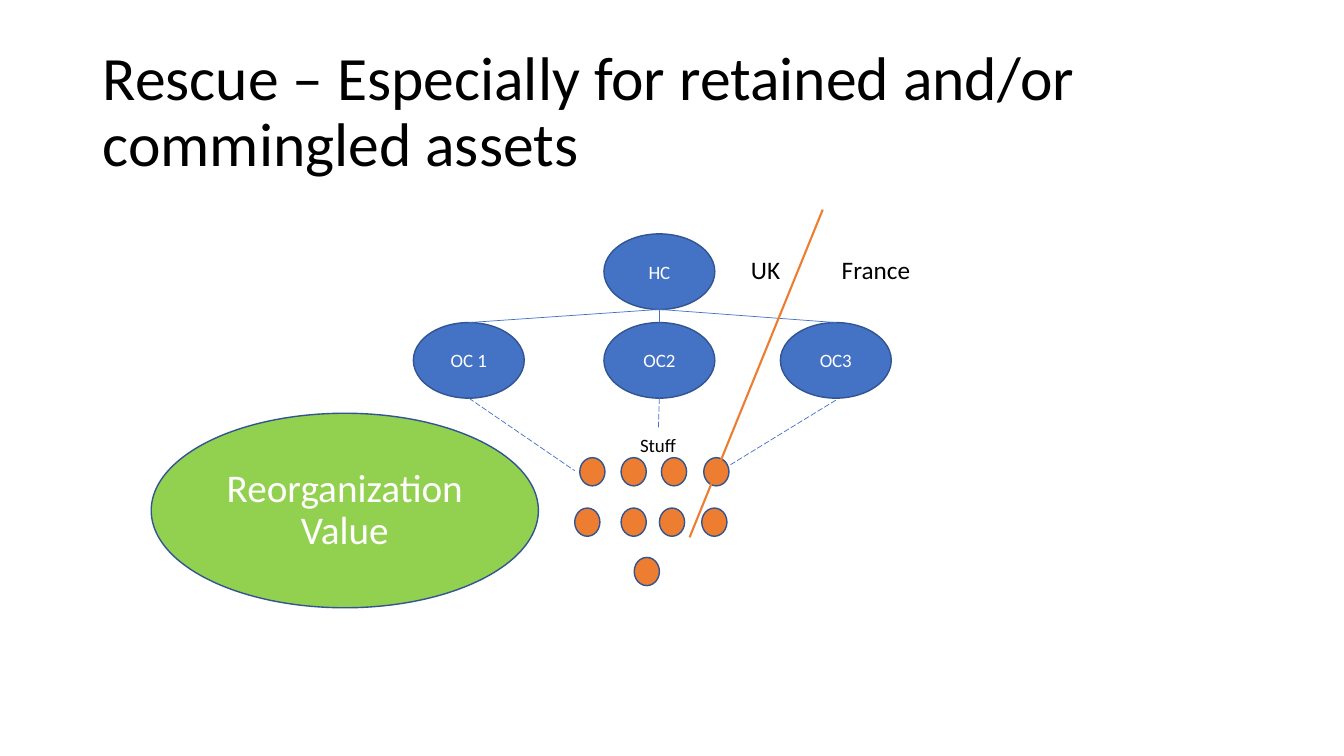
from dataclasses import dataclass

from lxml import etree
from pptx import Presentation
from pptx.dml.color import RGBColor
from pptx.enum.dml import MSO_LINE
from pptx.enum.shapes import MSO_CONNECTOR, MSO_SHAPE
from pptx.enum.text import MSO_ANCHOR, PP_ALIGN
from pptx.oxml.ns import qn
from pptx.util import Pt

PX = 9144
OVAL = MSO_SHAPE.OVAL
LINE = MSO_CONNECTOR.STRAIGHT
DASH = MSO_LINE.LONG_DASH
MID = MSO_ANCHOR.MIDDLE
TOP = MSO_ANCHOR.TOP
LEFT = PP_ALIGN.LEFT
MIDDLE = PP_ALIGN.CENTER


@dataclass(frozen=True)
class Theme:
    font: str = "Calibri"
    ink: str = "000000"
    white: str = "FFFFFF"
    blue: str = "4472C4"
    edge: str = "325491"
    orange: str = "ED7D31"
    green: str = "92D050"
    title: float = 44
    value: float = 28
    label: float = 18
    small: float = 13.5
    rim: float = 1
    thin: float = 0.5
    thick: float = 1.5


THEME = Theme()


def scale(*sizes):
    return [size * PX for size in sizes]


def color(code):
    return RGBColor.from_string(code)


def write(shape, text, size, ink, align, anchor, wrap=True):
    frame = shape.text_frame
    frame.text = text
    frame.word_wrap = wrap
    frame.vertical_anchor = anchor
    para = frame.paragraphs[0]
    para.alignment = align
    font = para.runs[0].font
    font.name = THEME.font
    font.size = Pt(size)
    font.color.rgb = color(ink)
    return para


def label(slide, box, text, size, anchor=TOP, wrap=False):
    shape = slide.shapes.add_textbox(*scale(*box))
    return write(shape, text, size, THEME.ink, LEFT, anchor, wrap)


def oval(slide, box, fill):
    shape = slide.shapes.add_shape(OVAL, *scale(*box))
    shape.shadow.inherit = False
    shape.fill.solid()
    shape.fill.fore_color.rgb = color(fill)
    shape.line.color.rgb = color(THEME.edge)
    shape.line.width = Pt(THEME.rim)
    return shape


def link(slide, ends, ink, width, dash=None):
    line = slide.shapes.add_connector(LINE, *scale(*ends))
    line.line.color.rgb = color(ink)
    line.line.width = Pt(width)
    if dash:
        line.line.dash_style = dash
    etree.SubElement(line._element.spPr, qn("a:effectLst"))


def title(slide, box):
    text = "Rescue – Especially for retained and/or commingled assets"
    para = label(slide, box, text, THEME.title, MID, True)
    para.line_spacing = 0.9


def firms(slide, box):
    left, top, width, height = box
    wide, high = 110, 75
    hub = left + 189
    low = top + height - high
    nodes = [("HC", hub, top), ("OC 1", left, low), ("OC2", hub, low),
             ("OC3", left + width - wide, low)]
    for name, x, y in nodes:
        shape = oval(slide, (x, y, wide, high), THEME.blue)
        write(shape, name, THEME.small, THEME.white, MIDDLE, MID)
    half = wide // 2
    for name, x, y in nodes[1:]:
        ends = (hub + half, top + high, x + half, y)
        link(slide, ends, THEME.blue, THEME.thin)


def assets(slide, box):
    left, top, width, height = box
    wide, high = 25, 28
    rows = [(59, (110, 151, 191, 233)), (109, (105, 151, 189, 231)),
            (height - high, (164,))]
    for y, places in rows:
        for x in places:
            oval(slide, (left + x, top + y, wide, high), THEME.orange)
    label(slide, (left + 160, top + 30, 57, 33), "Stuff", THEME.small)
    for x, y, to_x, to_y in [(0, 0, 105, 72), (189, 0, 188, 30),
                             (width, 2, 258, 67)]:
        ends = (left + x, top + y, left + to_x, top + to_y)
        link(slide, ends, THEME.blue, THEME.thin, DASH)


def border(slide, box):
    left, top, width, height = box
    ends = (left + width, top, left, top + height)
    link(slide, ends, THEME.orange, THEME.thick)
    for name, x, wide in [("UK", 51, 49), ("France", 141, 89)]:
        label(slide, (left + x, top + 39, wide, 40), name, THEME.label)


def value(slide, box):
    shape = oval(slide, box, THEME.green)
    para = write(shape, "Reorganization Value", THEME.value, THEME.white,
                 MIDDLE, MID)
    para.line_spacing = 0.9
    para.space_before = Pt(10)


def main():
    deck = Presentation()
    deck.slide_width, deck.slide_height = scale(1333, 750)
    slide = deck.slides.add_slide(deck.slide_layouts[6])
    title(slide, (92, 40, 1150, 145))
    firms(slide, (410, 232, 474, 163))
    assets(slide, (465, 395, 364, 186))
    value(slide, (150, 410, 384, 193))
    border(slide, (684, 208, 132, 325))
    deck.save("out.pptx")


if __name__ == "__main__":
    main()
